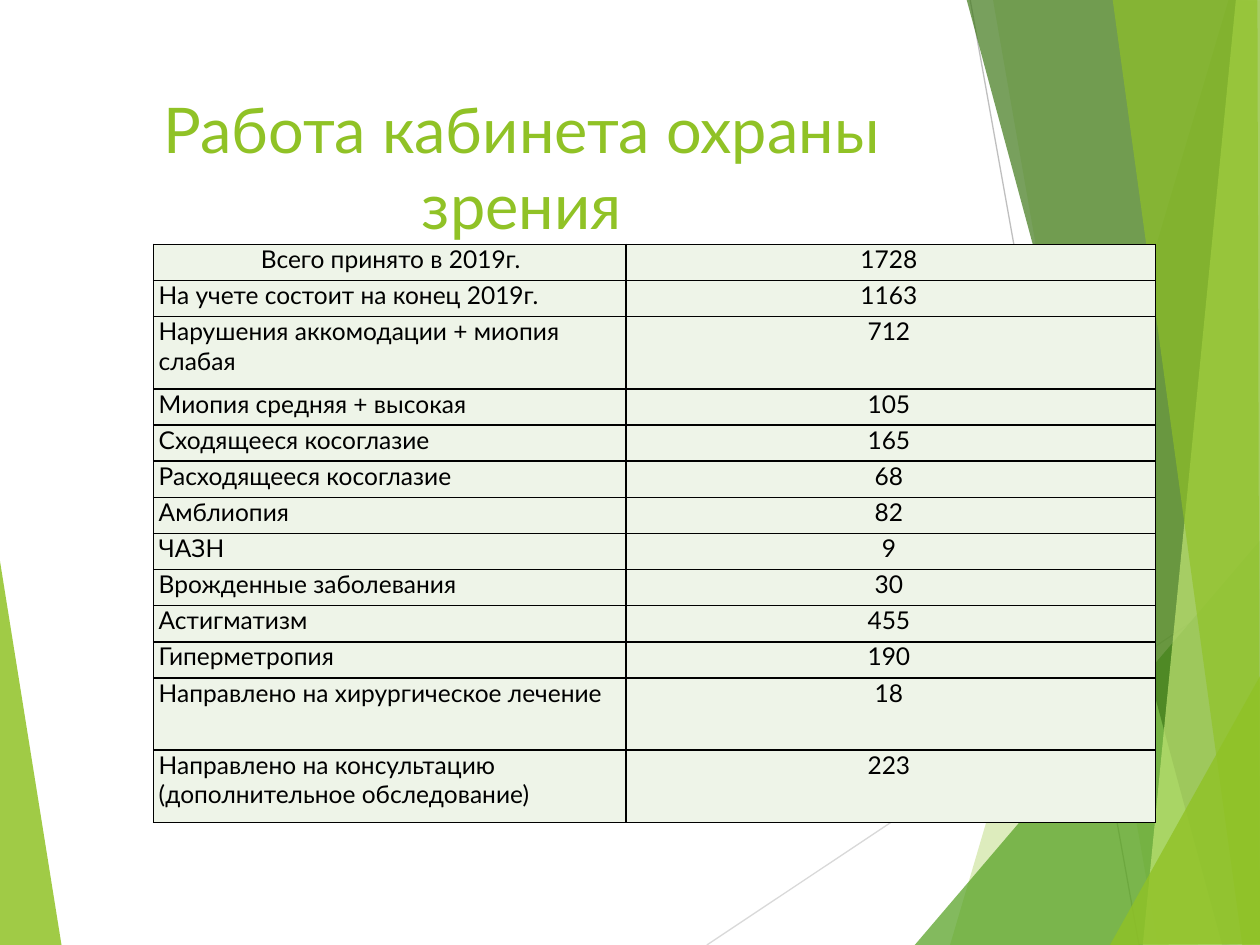
from lxml.etree import SubElement
from pptx import Presentation
from pptx.dml.color import RGBColor
from pptx.enum.shapes import MSO_CONNECTOR
from pptx.enum.text import PP_ALIGN
from pptx.oxml.ns import qn
from pptx.util import Inches, Pt

FONT = "Lato"
BLACK, GREEN, CELL_FILL = "000000", "90C226", "EEF4E8"

TITLE = "Работа кабинета охраны зрения"
RESULTS = [
    ("Всего принято в 2019г.", "1728"),
    ("На учете состоит на конец 2019г.", "1163"),
    ("Нарушения аккомодации + миопия слабая", "712"),
    ("Миопия средняя + высокая", "105"),
    ("Сходящееся косоглазие", "165"),
    ("Расходящееся косоглазие", "68"),
    ("Амблиопия", "82"),
    ("ЧАЗН", "9"),
    ("Врожденные заболевания", "30"),
    ("Астигматизм", "455"),
    ("Гиперметропия", "190"),
    ("Направлено на хирургическое лечение", "18"),
    ("Направлено на консультацию (дополнительное обследование)", "223"),
]
TALL_ROWS = {2, 11, 12}
ROW_HEIGHT = 0.287
COLUMN_WIDTHS = (3.75, 4.2)

# Facets: colour, opacity in percent, corners
LEFT_FACET = (GREEN, 85, [(-0.01, 4.39), (0.49, 7.51), (-0.01, 7.5)])
RIGHT_FACETS = [
    (GREEN, 30, [(9.75, 0), (7.54, 7.5), (10.02, 7.51), (10.01, 0.01)]),
    (GREEN, 20, [(7.88, -0.01), (9.19, 7.5), (10.01, 7.5), (10.01, -0.01)]),
    ("54A021", 72, [(7.26, 7.5), (10, 4.29), (10.01, 7.5)]),
    ("3F7819", 70, [(7.67, -0.01), (9.7, 7.5), (10.01, 7.49), (10.01, -0.01)]),
    ("C0E474", 70, [(9.81, -0.01), (9.07, 7.5), (10.01, 7.5), (10, -0.01)]),
    (GREEN, 65, [(8.83, -0.01), (9.86, 7.5), (10, 7.5), (9.98, -0.01)]),
    (GREEN, 80, [(8.81, 7.5), (10.01, 5.35), (10.01, 7.49)]),
]
RAYS = [
    ("D9D9D9", (5.61, 7.5), (10.01, 4.57)),
    ("BFBFBF", (7.7, 0), (9.04, 7.5)),
]


def color(hex_value):
    return RGBColor.from_string(hex_value)


def style(paragraph, size, hex_value, align):
    paragraph.alignment = align
    paragraph.font.name = FONT
    paragraph.font.size = Pt(size)
    paragraph.font.color.rgb = color(hex_value)


def add_facet(slide, hex_value, opacity, corners):
    points = [(Inches(x), Inches(y)) for x, y in corners]
    builder = slide.shapes.build_freeform(*points[0])
    builder.add_line_segments(points[1:], close=True)
    facet = builder.convert_to_shape()
    facet.shadow.inherit = False
    facet.line.fill.background()
    facet.fill.solid()
    facet.fill.fore_color.rgb = color(hex_value)
    fill_color = facet.fill._xPr.find(qn("a:solidFill"))[0]
    SubElement(fill_color, qn("a:alpha"), val=str(opacity * 1000))


def add_ray(slide, hex_value, start, end):
    ray = slide.shapes.add_connector(
        MSO_CONNECTOR.STRAIGHT, *(Inches(v) for v in start + end))
    ray.line.color.rgb = color(hex_value)
    ray.line.width = Pt(0.75)
    SubElement(ray._element.spPr, qn("a:effectLst"))


def add_borders(cell):
    """Draw a 1 pt black line on all four sides; borders precede the fill."""
    properties = cell._tc.get_or_add_tcPr()
    for index, side in enumerate(("a:lnL", "a:lnR", "a:lnT", "a:lnB")):
        border = SubElement(properties, qn(side), w=str(Pt(1)))
        fill = SubElement(border, qn("a:solidFill"))
        SubElement(fill, qn("a:srgbClr"), val=BLACK)
        properties.insert(index, border)


def add_title(slide):
    box = slide.shapes.add_textbox(
        Inches(0.67), Inches(0.67), Inches(6.94), Inches(1.44))
    box.text_frame.word_wrap = True
    box.text_frame.text = TITLE
    style(box.text_frame.paragraphs[0], 36, GREEN, PP_ALIGN.CENTER)


def add_results(slide):
    heights = [ROW_HEIGHT * (2 if row in TALL_ROWS else 1)
               for row in range(len(RESULTS))]
    table = slide.shapes.add_table(
        len(RESULTS), 2, Inches(1.22), Inches(1.94),
        Inches(sum(COLUMN_WIDTHS)), Inches(sum(heights))).table
    for column, width in zip(table.columns, COLUMN_WIDTHS):
        column.width = Inches(width)
    for row, height in zip(table.rows, heights):
        row.height = Inches(height)

    for row, values in enumerate(RESULTS):
        for column, value in enumerate(values):
            cell = table.cell(row, column)
            cell.text = value
            indent = 0.81 if row == column == 0 else 0
            cell.margin_left = Inches(0.04 + indent)
            cell.margin_right = Inches(0.07)
            cell.margin_top = cell.margin_bottom = 0
            cell.fill.solid()
            cell.fill.fore_color.rgb = color(CELL_FILL)
            add_borders(cell)
            paragraph = cell.text_frame.paragraphs[0]
            style(paragraph, 14, BLACK,
                  PP_ALIGN.CENTER if column else PP_ALIGN.LEFT)
            paragraph.font.bold = False


def main():
    presentation = Presentation()
    presentation.slide_width = Inches(10)
    presentation.slide_height = Inches(7.5)
    slide = presentation.slides.add_slide(presentation.slide_layouts[6])

    add_facet(slide, *LEFT_FACET)
    for ray in RAYS:
        add_ray(slide, *ray)
    for facet in RIGHT_FACETS:
        add_facet(slide, *facet)
    add_title(slide)
    add_results(slide)
    presentation.save("out.pptx")


if __name__ == "__main__":
    main()
